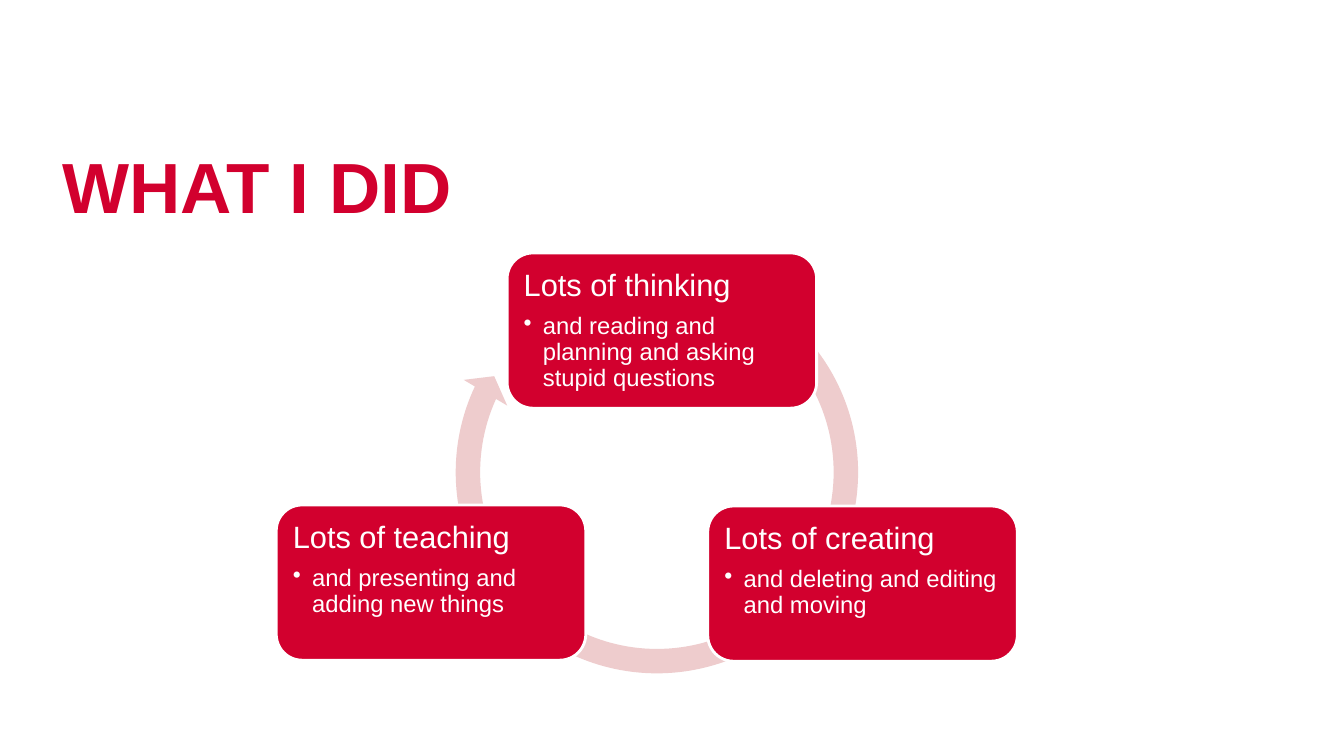
import pptx
import pptx.dml.color
import pptx.enum.shapes
import pptx.enum.text
import pptx.util
from lxml import etree

SHAPES = pptx.enum.shapes.MSO_SHAPE
ANCHOR = pptx.enum.text.MSO_ANCHOR
ALIGN = pptx.enum.text.PP_ALIGN
Inches = pptx.util.Inches

FONT = "Arial"
RED = "D2002E"
PINK = "EECCCD"
WHITE = "FFFFFF"

CARD_WIDTH, CARD_HEIGHT = 3.07, 1.54
CARDS = [
    (5.03, 2.51, "Lots of thinking", "and reading and planning and asking stupid questions"),
    (7.02, 5.02, "Lots of creating", "and deleting and editing and moving"),
    (2.74, 5.01, "Lots of teaching", "and presenting and adding new things"),
]


def colour(value):
    return pptx.dml.color.RGBColor.from_string(value)


def set_margins(frame, margin):
    frame.margin_left = frame.margin_right = Inches(margin)
    frame.margin_top = frame.margin_bottom = Inches(margin)


def add_run(paragraph, text, size, text_colour, bold=False):
    run = paragraph.add_run()
    run.text = text
    run.font.name = FONT
    run.font.size = pptx.util.Pt(size)
    run.font.bold = bold
    run.font.color.rgb = colour(text_colour)


def add_filled_shape(slide, kind, box, fill):
    shape = slide.shapes.add_shape(kind, *map(Inches, box))
    shape.shadow.inherit = False
    shape.fill.solid()
    shape.fill.fore_color.rgb = colour(fill)
    shape.line.fill.background()
    return shape


def add_bullet(paragraph, indent):
    properties = paragraph._p.get_or_add_pPr()
    properties.set("marL", str(Inches(indent)))
    properties.set("indent", str(-Inches(indent)))
    bullet = etree.SubElement(properties, pptx.oxml.ns.qn("a:buChar"))
    bullet.set("char", "•")


def add_title(slide, box, text):
    frame = slide.shapes.add_textbox(*map(Inches, box)).text_frame
    set_margins(frame, 0)
    frame.word_wrap = False
    frame.vertical_anchor = ANCHOR.BOTTOM
    frame.paragraphs[0].alignment = ALIGN.LEFT
    add_run(frame.paragraphs[0], text, 50.7, RED, bold=True)


def add_cycle_arrow(slide, box):
    arrow = add_filled_shape(slide, SHAPES.CIRCULAR_ARROW, box, PINK)
    thickness, head_width = 5.7 / 100, 5.9 / 100
    # Angles in degrees, stored in units of 0.6 per degree
    head_angle, end_angle, start_angle = (angle * 0.6 for angle in (5.68, 204.88, 306.05))
    values = (thickness, head_angle, end_angle, start_angle, head_width)
    for index, value in enumerate(values):
        arrow.adjustments[index] = value


def add_card(slide, box, heading, detail):
    card = add_filled_shape(slide, SHAPES.ROUNDED_RECTANGLE, box, RED)
    card.line.color.rgb = colour(WHITE)
    card.line.width = pptx.util.Pt(2)
    frame = card.text_frame
    set_margins(frame, 0.09)
    frame.word_wrap = True
    frame.vertical_anchor = ANCHOR.TOP
    lines = [
        (frame.paragraphs[0], heading, 22, 8),
        (frame.add_paragraph(), detail, 17, 3),
    ]
    for paragraph, text, size, space_after in lines:
        paragraph.alignment = ALIGN.LEFT
        paragraph.line_spacing = 0.9
        paragraph.space_after = pptx.util.Pt(space_after)
        add_run(paragraph, text, size, WHITE)
    frame.paragraphs[1].level = 1
    add_bullet(frame.paragraphs[1], 0.19)


def add_cycle_slide(presentation):
    slide = presentation.slides.add_slide(presentation.slide_layouts[6])
    add_title(slide, (0.62, 1.35, 12.07, 0.91), "WHAT I DID")

    # Cycle: ring behind three cards
    add_cycle_arrow(slide, (4.39, 2.56, 4.25, 4.25))
    for left, top, heading, detail in CARDS:
        add_card(slide, (left, top, CARD_WIDTH, CARD_HEIGHT), heading, detail)


def main():
    presentation = pptx.Presentation()
    presentation.slide_width = Inches(13.33)
    presentation.slide_height = Inches(7.5)
    add_cycle_slide(presentation)
    presentation.save("out.pptx")


if __name__ == "__main__":
    main()
